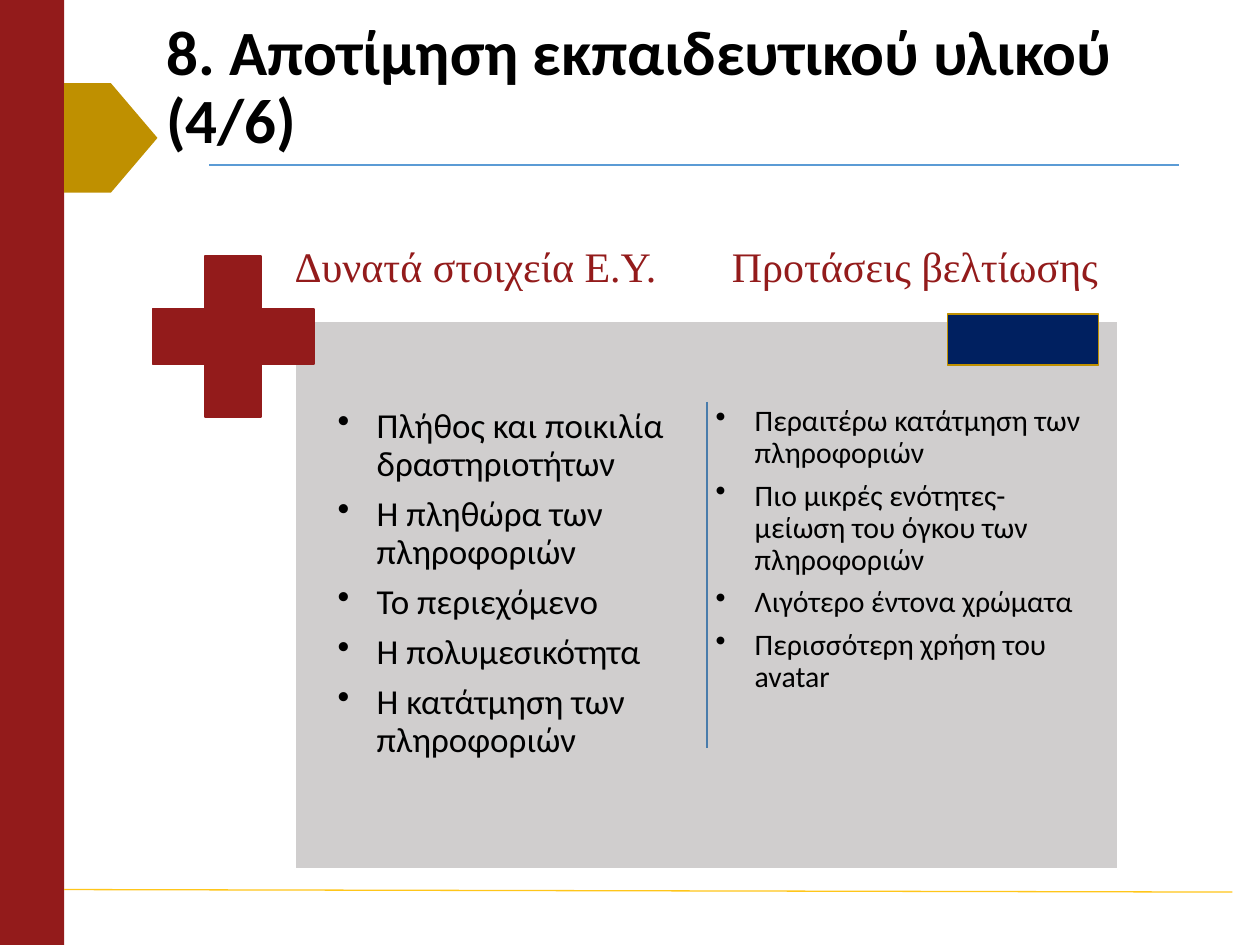
from dataclasses import dataclass

from lxml.etree import SubElement
from pptx import Presentation
from pptx.dml.color import RGBColor
from pptx.enum.shapes import MSO_CONNECTOR, MSO_SHAPE
from pptx.enum.text import MSO_ANCHOR, MSO_AUTO_SIZE, PP_ALIGN
from pptx.oxml.ns import qn
from pptx.util import Inches, Pt


@dataclass(frozen=True)
class Theme:
    """Colours, fonts and type sizes of the slide."""
    red: str = "931B1B"
    gold: str = "BF9000"
    amber: str = "FFC61A"
    sky: str = "5B9BD5"
    steel: str = "497CAB"
    navy: str = "002060"
    gray: str = "D0CECE"
    white: str = "FFFFFF"
    black: str = "000000"
    sans: str = "Calibri"
    serif: str = "Times New Roman"
    title: int = 36
    head: int = 24
    large: int = 20
    small: int = 17


THEME = Theme()
COLS, ROWS = 100, 75
WIDTH, HEIGHT = Inches(10), Inches(7.5)
HEADS = (
    ("Δυνατά στοιχεία Ε.Υ.", 22.4, 31.5),
    ("Προτάσεις βελτίωσης", 57.1, 33.9),
)
STRONG = (
    "Πλήθος και ποικιλία δραστηριοτήτων",
    "Η πληθώρα των πληροφοριών",
    "Το περιεχόμενο",
    "Η πολυμεσικότητα",
    "Η κατάτμηση των πληροφοριών",
)
IDEAS = (
    "Περαιτέρω κατάτμηση των πληροφοριών",
    "Πιο μικρές ενότητες-μείωση του όγκου των πληροφοριών",
    "Λιγότερο έντονα χρώματα",
    "Περισσότερη χρήση του avatar",
)


def grid(x, y, w, h):
    """Turn two pairs of columns and rows into lengths."""
    wide, high = WIDTH / COLS, HEIGHT / ROWS
    return [round(n * unit) for n, unit in zip((x, y, w, h), (wide, high) * 2)]


def color(code):
    """Return the colour of a hex code."""
    return RGBColor.from_string(code)


def shape(slide, kind, area, fill, line=None, adj=None):
    """Add a filled preset shape on the grid."""
    item = slide.shapes.add_shape(kind, *grid(*area))
    item.shadow.inherit = False
    item.fill.solid()
    item.fill.fore_color.rgb = color(fill)
    if line:
        item.line.color.rgb = color(line)
        item.line.width = Pt(1)
    else:
        item.line.fill.background()
    if adj is not None:
        item.adjustments[0] = adj


def rule(slide, ends, tint, width=0.75):
    """Add a straight line between two grid points."""
    line = slide.shapes.add_connector(MSO_CONNECTOR.STRAIGHT, *grid(*ends))
    line.line.color.rgb = color(tint)
    line.line.width = Pt(width)
    SubElement(line._element.spPr, qn("a:effectLst"))


def write(par, text, *, size, font=THEME.sans, tint=THEME.black,
          bold=False, space=None, after=0):
    """Put formatted text in a paragraph."""
    par.alignment = PP_ALIGN.LEFT
    par.line_spacing = space
    par.space_after = Pt(after)
    run = par.add_run()
    run.text = text
    run.font.size, run.font.name, run.font.bold = Pt(size), font, bold
    run.font.color.rgb = color(tint)


def frame(slide, area):
    """Add a wrapped text box and return its frame."""
    body = slide.shapes.add_textbox(*grid(*area)).text_frame
    body.word_wrap = True
    return body


def bullets(slide, items, area, size):
    """Add a bulleted list with a hanging indent."""
    body = frame(slide, area)
    body.margin_left = body.margin_right = Inches(0.04)
    body.margin_top = body.margin_bottom = Inches(0.04)
    hang = Inches(0.31)
    for i, text in enumerate(items):
        par = body.add_paragraph() if i else body.paragraphs[0]
        write(par, text, size=size, space=0.9, after=0.35 * size)
        props = par._p.get_or_add_pPr()
        props.set("marL", str(hang))
        props.set("indent", str(-hang))
        SubElement(props, qn("a:buChar"), char="•")


def title(slide, text):
    """Place and fill the title."""
    item = slide.shapes.title
    item.left, item.top, item.width, item.height = grid(12.2, 2.7, 85, 8.8)
    body = item.text_frame
    body.word_wrap = True
    body.auto_size = MSO_AUTO_SIZE.NONE
    body.vertical_anchor = MSO_ANCHOR.MIDDLE
    write(body.paragraphs[0], text, size=THEME.title, bold=True, space=0.9)


def trim(slide):
    """Draw the side bar, the tab and the two rules."""
    shape(slide, MSO_SHAPE.RECTANGLE, (0, 0, 5.1, ROWS), THEME.red)
    rule(slide, (16.6, 13.1, 93.6, 13.1), THEME.sky)
    rule(slide, (5.1, 70.6, 97.8, 70.8), THEME.amber)
    shape(slide, MSO_SHAPE.PENTAGON, (5.1, 6.6, 7.4, 8.7), THEME.gold)


def panel(slide):
    """Draw the two lists with their heads and signs."""
    shape(slide, MSO_SHAPE.RECTANGLE, (23.4, 25.5, 65.3, 43.5),
          THEME.gray, THEME.white)
    bullets(slide, STRONG, (26.4, 32, 30.3, 28.9), THEME.large)
    bullets(slide, IDEAS, (56.4, 31.8, 30.3, 28.9), THEME.small)
    rule(slide, (56.1, 31.9, 56.1, 59.4), THEME.steel, 1)
    for text, left, wide in HEADS:
        body = frame(slide, (left, 18.6, wide, 5))
        body.auto_size = MSO_AUTO_SIZE.SHAPE_TO_FIT_TEXT
        write(body.paragraphs[0], text, size=THEME.head,
              font=THEME.serif, tint=THEME.red)
    shape(slide, MSO_SHAPE.CROSS, (12.1, 20.3, 12.8, 12.8),
          THEME.red, THEME.red, adj=0.328)
    shape(slide, MSO_SHAPE.RECTANGLE, (75.2, 24.9, 12, 4.1),
          THEME.navy, THEME.gold)


def main():
    """Build and save the slide."""
    deck = Presentation()
    deck.slide_width, deck.slide_height = WIDTH, HEIGHT
    slide = deck.slides.add_slide(deck.slide_layouts.get_by_name("Title Only"))
    trim(slide)
    title(slide, "8. Αποτίμηση εκπαιδευτικού υλικού (4/6)")
    panel(slide)
    deck.save("out.pptx")


if __name__ == "__main__":
    main()
